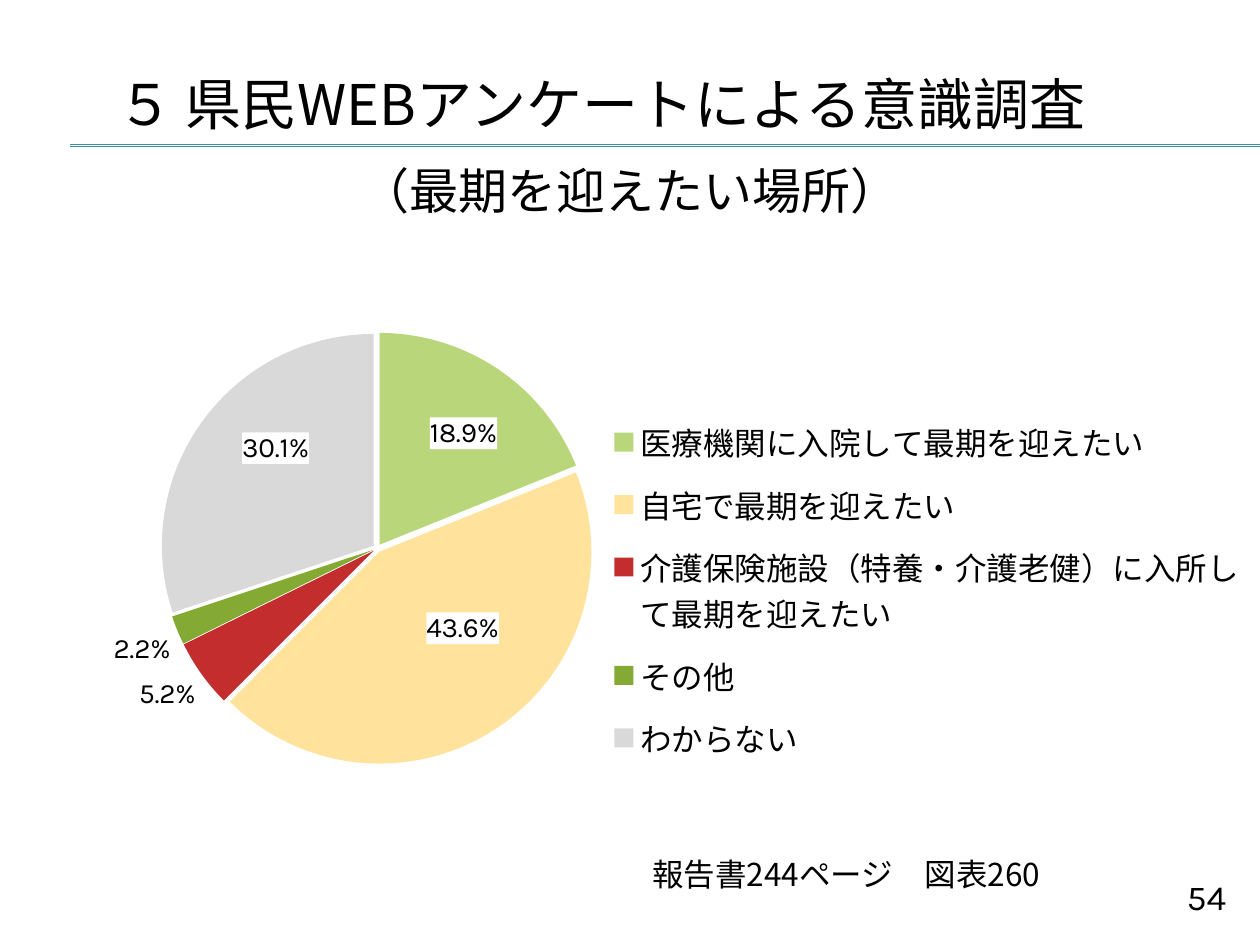
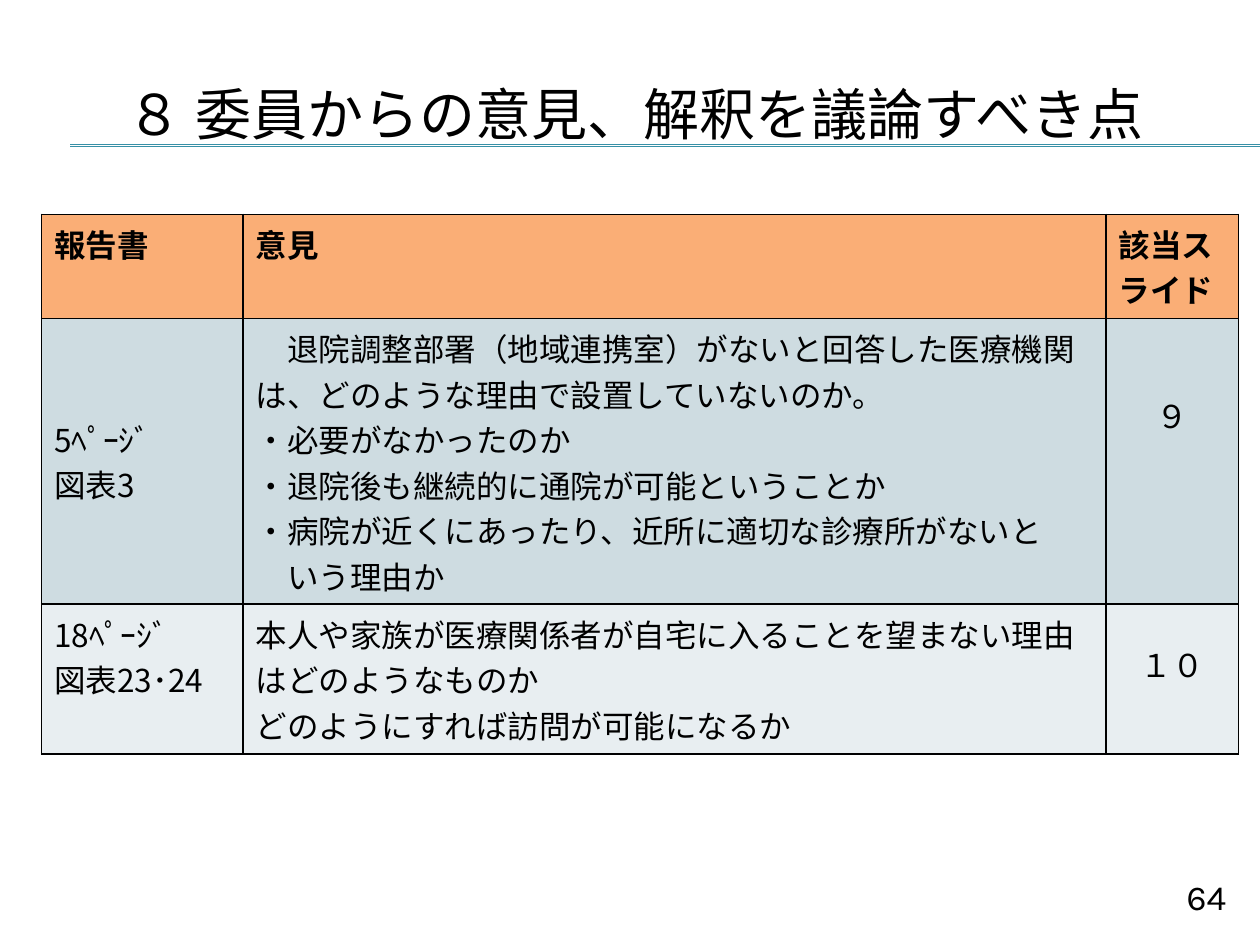
from lxml import etree
from pptx import Presentation
from pptx.chart.data import CategoryChartData
from pptx.dml.color import RGBColor
from pptx.enum.chart import XL_CHART_TYPE, XL_LABEL_POSITION, XL_LEGEND_POSITION
from pptx.enum.shapes import MSO_CONNECTOR
from pptx.enum.text import MSO_ANCHOR, PP_ALIGN
from pptx.oxml.ns import qn
from pptx.util import Cm, Pt

PIE = XL_CHART_TYPE.PIE
LABEL_CENTER = XL_LABEL_POSITION.CENTER
LABEL_OUTSIDE = XL_LABEL_POSITION.OUTSIDE_END
LEGEND_RIGHT = XL_LEGEND_POSITION.RIGHT
STRAIGHT = MSO_CONNECTOR.STRAIGHT
TOP, MIDDLE = MSO_ANCHOR.TOP, MSO_ANCHOR.MIDDLE
LEFT, CENTER, RIGHT = PP_ALIGN.LEFT, PP_ALIGN.CENTER, PP_ALIGN.RIGHT

GOTHIC, KARLA = "Noto Sans CJK JP", "Karla"
BLACK, WHITE, TEAL = "000000", "FFFFFF", "3891A7"
HEADER_FILL, ROW_FILLS = "FAAE76", ("CEDCE1", "E8EEF1")

WISHES = [
    ("医療機関に入院して最期を迎えたい", 0.189, "B9D77A"),
    ("自宅で最期を迎えたい", 0.436, "FFE39D"),
    ("介護保険施設（特養・介護老健）に入所して最期を迎えたい", 0.052, "C32D2E"),
    ("その他", 0.022, "84AA33"),
    ("わからない", 0.301, "D9D9D9"),
]
INNER_LABELS = {0: (0.02, -0.04), 1: (0.02, -0.02), 4: (-0.01, -0.06)}

HEADERS = ["報告書", "意見", "該当スライド"]
OPINIONS = [
    (
        ["5ﾍﾟｰｼﾞ", "図表3"],
        [
            "　退院調整部署（地域連携室）がないと回答した医療機関は、どのような理由で設置していないのか。",
            "・必要がなかったのか",
            "・退院後も継続的に通院が可能ということか",
            "・病院が近くにあったり、近所に適切な診療所がないと",
            "　いう理由か",
        ],
        ["９"],
    ),
    (
        ["18ﾍﾟｰｼﾞ", "図表23･24"],
        [
            "本人や家族が医療関係者が自宅に入ることを望まない理由はどのようなものか",
            "どのようにすれば訪問が可能になるか",
        ],
        ["１０"],
    ),
]
COLUMN_WIDTHS = (4.06, 17.4, 2.67)
ROW_HEIGHTS = (2.1, 5.76, 3.02)
TOP_MARGINS = ((1.96, 0.13, 1.63), (0.13, 0.13, 0.89))


def color(code):
    return RGBColor.from_string(code)


def paint(fill, code):
    fill.solid()
    fill.fore_color.rgb = color(code)


def place(parent, index, **fractions):
    current = parent.find(qn("c:layout"))
    if current is not None:
        parent.remove(current)
    layout = etree.Element(qn("c:layout"))
    manual = etree.SubElement(layout, qn("c:manualLayout"))
    for tag, value in fractions.items():
        etree.SubElement(manual, qn(f"c:{tag}")).set("val", str(value))
    parent.insert(index, layout)


class Deck:
    def __init__(self):
        self.presentation = Presentation()
        self.presentation.slide_width = Cm(25.4)
        self.presentation.slide_height = Cm(19.05)
        self.slide = None

    def start(self, title, left, top, number):
        blank = self.presentation.slide_layouts[6]
        self.slide = self.presentation.slides.add_slide(blank)
        paint(self.slide.background.fill, WHITE)
        for height in (2.92, 2.95):
            self.rule(1.42, height, 25.4)
        self.text(title, left, top, 24.13, 2.34, 32, anchor=MIDDLE)
        self.text(number, 22.86, 17.53, 2.11, 1.14, 20, KARLA, RIGHT)

    def rule(self, left, top, right):
        rule = self.slide.shapes.add_connector(
            STRAIGHT, Cm(left), Cm(top), Cm(right), Cm(top)
        )
        rule.line.color.rgb = color(TEAL)
        rule.line.width = Pt(0.75)
        etree.SubElement(rule._element.spPr, qn("a:effectLst"))

    def fill_text(self, frame, lines, size, face=GOTHIC, align=LEFT, bold=False):
        frame.word_wrap = True
        for index, line in enumerate(lines):
            paragraph = frame.add_paragraph() if index else frame.paragraphs[0]
            paragraph.alignment = align
            run = paragraph.add_run()
            run.text = line
            run.font.name = face
            run.font.size = Pt(size)
            run.font.bold = bold
            run.font.color.rgb = color(BLACK)
            east_asian = etree.Element(qn("a:ea"), typeface=face)
            run.font._element.find(qn("a:latin")).addnext(east_asian)

    def text(self, line, left, top, width, height, size,
             face=GOTHIC, align=LEFT, anchor=TOP):
        box = self.slide.shapes.add_textbox(Cm(left), Cm(top), Cm(width), Cm(height))
        box.text_frame.vertical_anchor = anchor
        self.fill_text(box.text_frame, [line], size, face, align)

    def pie(self, entries, left, top, width, height):
        names, shares, colors = zip(*entries)
        data = CategoryChartData(number_format="0.0%")
        data.categories = names
        data.add_series("Series 1", shares)
        chart = self.slide.shapes.add_chart(
            PIE, Cm(left), Cm(top), Cm(width), Cm(height), data
        ).chart
        chart.has_title = False
        chart.font.name = KARLA
        chart.font.size = Pt(10)
        chart.font.color.rgb = color(BLACK)
        chart.has_legend = True
        legend = chart.legend
        legend.position = LEGEND_RIGHT
        legend.include_in_layout = False
        legend.font.size = Pt(18)
        legend.font.color.rgb = color(BLACK)
        place(legend._element, 1, xMode="edge", yMode="edge",
              x=0.47, y=0.3, w=0.52, h=0.63)
        plot_area = chart._chartSpace.find(".//" + qn("c:plotArea"))
        place(plot_area, 0, layoutTarget="inner", xMode="edge", yMode="edge",
              x=0.11, y=0.18, w=0.35, h=0.73)

        plot = chart.plots[0]
        plot.vary_by_categories = True
        series = plot.series[0]
        for index, code in enumerate(colors):
            paint(series.points[index].format.fill, code)
        explosion = etree.Element(qn("c:explosion"), val="2")
        series._element.find(qn("c:dPt")).addprevious(explosion)

        labels = series.data_labels
        labels.show_value = True
        labels.number_format = "0.0%"
        labels.number_format_is_linked = False
        labels.position = LABEL_OUTSIDE
        labels.font.size = Pt(16)
        labels.font.color.rgb = color(BLACK)
        for index, (x, y) in INNER_LABELS.items():
            self.inner_label(series.points[index].data_label, x, y)

    def inner_label(self, label, x, y):
        label.font.size = Pt(16)
        label.font.color.rgb = color(BLACK)
        label.position = LABEL_CENTER
        element = label._dLbl
        place(element, 1, x=x, y=y)
        properties = etree.Element(qn("c:spPr"))
        fill = etree.SubElement(properties, qn("a:solidFill"))
        etree.SubElement(fill, qn("a:srgbClr"), val=WHITE)
        for existing in element.findall(qn("c:spPr")):
            element.remove(existing)
        element.insert(2, properties)

    def cell(self, cell, lines, fill, **style):
        paint(cell.fill, fill)
        self.fill_text(cell.text_frame, lines, 18, **style)
        properties = cell._tc.get_or_add_tcPr()
        for index, side in enumerate(("lnL", "lnR", "lnT", "lnB")):
            border = etree.Element(qn(f"a:{side}"), w=str(Pt(1)))
            line_fill = etree.SubElement(border, qn("a:solidFill"))
            etree.SubElement(line_fill, qn("a:srgbClr"), val=BLACK)
            properties.insert(index, border)

    def table(self, headers, rows, left, top):
        table = self.slide.shapes.add_table(
            len(rows) + 1, len(headers), Cm(left), Cm(top),
            Cm(sum(COLUMN_WIDTHS)), Cm(sum(ROW_HEIGHTS)),
        ).table
        table.first_row = False
        table.horz_banding = False
        for column, width in zip(table.columns, COLUMN_WIDTHS):
            column.width = Cm(width)
        for row, height in zip(table.rows, ROW_HEIGHTS):
            row.height = Cm(height)
        for column, header in enumerate(headers):
            self.cell(table.cell(0, column), [header], HEADER_FILL, bold=True)
        for row, (entries, fill, margins) in enumerate(
            zip(rows, ROW_FILLS, TOP_MARGINS), start=1
        ):
            for column, (lines, margin) in enumerate(zip(entries, margins)):
                is_slide_number = column == len(headers) - 1
                cell = table.cell(row, column)
                cell.margin_top = Cm(margin)
                self.cell(
                    cell, lines, fill,
                    face=KARLA if is_slide_number else GOTHIC,
                    align=CENTER if is_slide_number else LEFT,
                )


def main():
    deck = Deck()

    deck.start("５ 県民WEBアンケートによる意識調査", 2.11, 0.91, "54")
    deck.text("（最期を迎えたい場所）", 4.37, 3.12, 16.66, 1.45, 28, KARLA, CENTER)
    deck.text("報告書244ページ　図表260", 12.9, 17.12, 13.79, 1.4, 18)
    deck.pie(WISHES, 0.51, 4.52, 24.89, 11.99)

    deck.start("８ 委員からの意見、解釈を議論すべき点", 2.31, 1.12, "64")
    deck.table(HEADERS, OPINIONS, 0.84, 4.32)

    deck.presentation.save("out.pptx")


if __name__ == "__main__":
    main()
